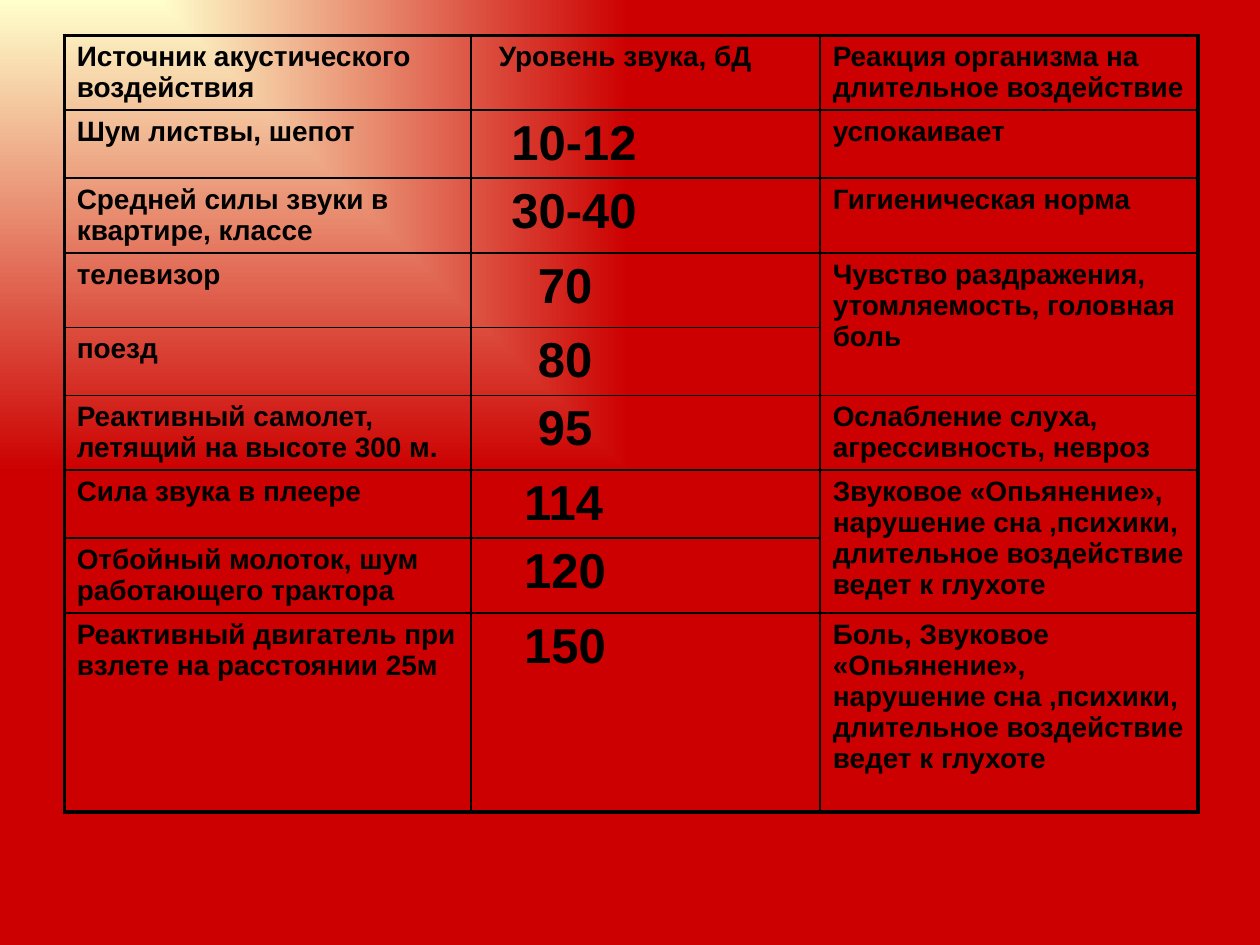
from lxml import etree
from pptx import Presentation
from pptx.dml.color import RGBColor
from pptx.oxml.ns import qn
from pptx.util import Inches, Pt

CREAM = RGBColor(0xFF, 0xFF, 0xCC)
RED = RGBColor(0xCC, 0x00, 0x00)
BLACK = RGBColor(0x00, 0x00, 0x00)

THIN, THICK = Pt(1), Pt(2.25)
TEXT_MARGIN = 0.1
LEVEL_COLUMN = 1

HEADINGS = ("Источник акустического воздействия", "Уровень звука, бД",
            "Реакция организма на длительное воздействие")
DEAFNESS = ("Звуковое «Опьянение», нарушение сна ,психики, "
            "длительное воздействие ведет к глухоте")
# An empty reaction continues the one above it.
SOUNDS = [
    ("Шум листвы, шепот", "10-12", "успокаивает"),
    ("Средней силы звуки в квартире, классе", "30-40", "Гигиеническая норма"),
    ("телевизор", "70", "Чувство раздражения, утомляемость, головная боль"),
    ("поезд", "80", None),
    ("Реактивный самолет, летящий на высоте 300 м.", "95",
     "Ослабление слуха, агрессивность, невроз"),
    ("Сила звука в плеере", "114", DEAFNESS),
    ("Отбойный молоток, шум работающего трактора", "120", None),
    ("Реактивный двигатель при взлете на расстоянии 25м", "150",
     "Боль, " + DEAFNESS),
]
LEVEL_MARGINS = {5: 0.32, 3: 0.42, 2: 0.53}  # by number of characters
HEADING_MARGIN = 0.22
COLUMN_WIDTHS = (3.23, 2.77, 3)
ROW_HEIGHTS = (0.59, 0.54, 0.59, 0.59, 0.54, 0.59, 0.54, 0.59, 1.58)


def add_border(cell, side, width):
    line = etree.SubElement(cell._tc.get_or_add_tcPr(), qn(f"a:ln{side}"), w=str(width))
    fill = etree.SubElement(line, qn("a:solidFill"))
    etree.SubElement(fill, qn("a:srgbClr"), val=str(BLACK))


prs = Presentation()
prs.slide_width, prs.slide_height = Inches(10), Inches(7.5)
slide = prs.slides.add_slide(prs.slide_layouts[6])

# Background spreading from the top left corner
background = slide.background.fill
background.gradient()
for stop, color in zip(background.gradient_stops, (CREAM, RED)):
    stop.color.rgb = color
linear = next(slide.element.iter(qn("a:lin")))
corner = etree.Element(qn("a:path"), path="rect")
etree.SubElement(corner, qn("a:fillToRect"), r="100000", b="100000")
linear.getparent().replace(linear, corner)

# Table of sound levels
rows = [HEADINGS, *SOUNDS]
last_row, last_column = len(rows) - 1, len(HEADINGS) - 1
table = slide.shapes.add_table(
    len(rows), len(HEADINGS), Inches(0.51), Inches(0.28),
    Inches(sum(COLUMN_WIDTHS)), Inches(sum(ROW_HEIGHTS))).table
table.first_row = table.horz_banding = False
for column, width in zip(table.columns, COLUMN_WIDTHS):
    column.width = Inches(width)
for row, height in zip(table.rows, ROW_HEIGHTS):
    row.height = Inches(height)

for r, texts in enumerate(rows):
    for c, text in enumerate(texts):
        cell = table.cell(r, c)
        if text is None:
            table.cell(r - 1, c).merge(cell)
            cell.fill.background()
            continue

        outer_edges = {"L": c == 0, "R": c == last_column, "T": r == 0, "B": r == last_row}
        for side, is_outer in outer_edges.items():
            add_border(cell, side, THICK if is_outer else THIN)
        cell.fill.background()

        margin, size = TEXT_MARGIN, 16
        if c == LEVEL_COLUMN:
            margin = LEVEL_MARGINS[len(text)] if r else HEADING_MARGIN
            size = 28 if r else 16
        cell.margin_left = Inches(margin)
        cell.text = text
        font = cell.text_frame.paragraphs[0].runs[0].font
        for name, value in {"name": "Arial", "size": Pt(size), "bold": True}.items():
            setattr(font, name, value)
        font.color.rgb = BLACK

prs.save("out.pptx")
